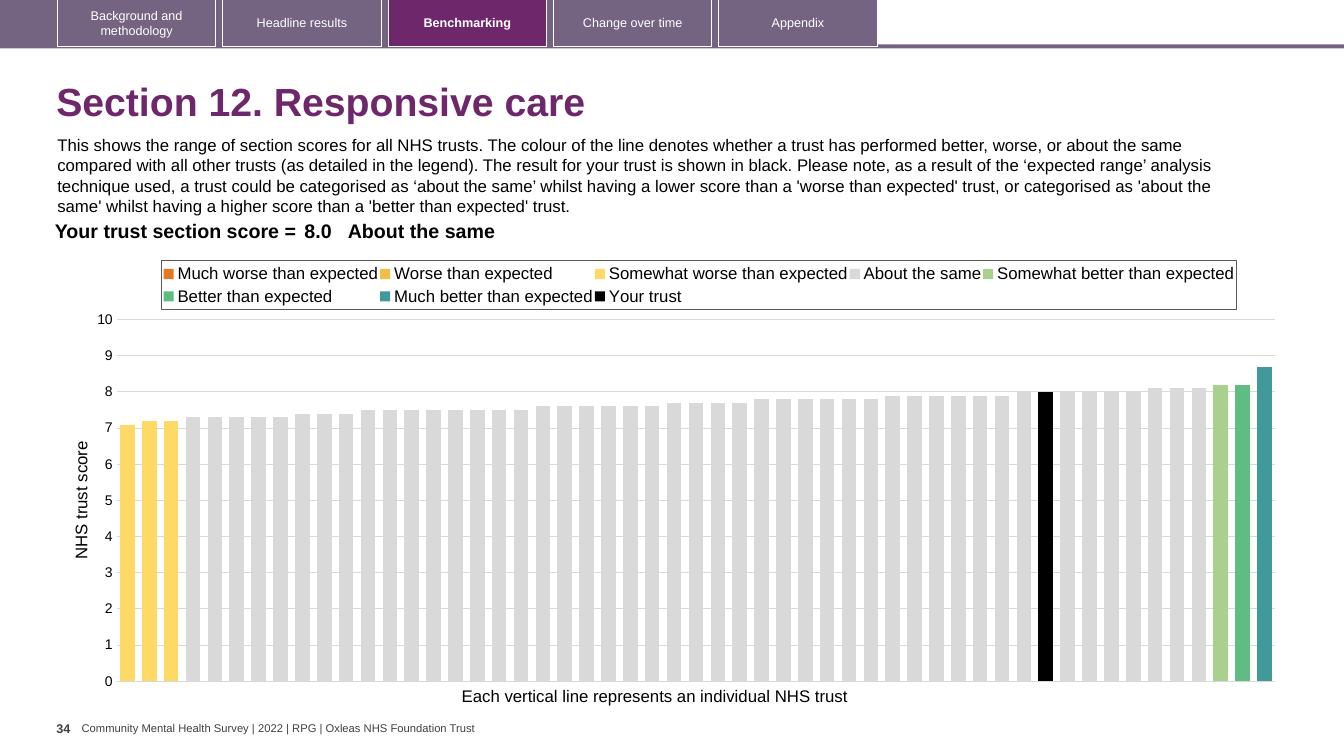
from copy import deepcopy
from itertools import chain, repeat

from lxml import etree
from pptx import Presentation
from pptx.chart.data import CategoryChartData
from pptx.dml.color import RGBColor
from pptx.enum.chart import XL_CHART_TYPE as ChartType, XL_LEGEND_POSITION as LegendPosition
from pptx.enum.chart import XL_TICK_MARK as TickMark
from pptx.enum.shapes import MSO_SHAPE as Shape
from pptx.enum.text import MSO_ANCHOR as Anchor, PP_ALIGN as Align
from pptx.oxml import parse_xml
from pptx.oxml.ns import nsdecls, qn
from pptx.util import Inches, Pt

COLORS = {
    "bar": "756382", "active": "6D276A", "white": "FFFFFF", "black": "000000",
    "footer": "404040", "grid": "D9D9D9", "border": "595959",
}


def write_text(frame, text, size, color, bold=False, align=Align.LEFT,
               anchor=Anchor.TOP, margins=(0.1, 0.05), wrap=True):
    frame.word_wrap = wrap
    frame.vertical_anchor = anchor
    frame.margin_left = frame.margin_right = Inches(margins[0])
    frame.margin_top = frame.margin_bottom = Inches(margins[1])
    paragraph = frame.paragraphs[0]
    paragraph.text = text
    paragraph.alignment = align
    font = paragraph.font
    font.name, font.size, font.bold = "Arial", Pt(size), bold
    font.color.rgb = RGBColor.from_string(COLORS[color])
    return paragraph


def manual_layout(x, y, width, height, inner=False):
    """Return a chart layout element; the numbers are fractions of the chart."""
    target = '<c:layoutTarget val="inner"/>' if inner else ""
    return parse_xml(
        f'<c:layout {nsdecls("c")}><c:manualLayout>{target}'
        '<c:xMode val="edge"/><c:yMode val="edge"/>'
        f'<c:x val="{x}"/><c:y val="{y}"/><c:w val="{width}"/><c:h val="{height}"/>'
        '</c:manualLayout></c:layout>')


presentation = Presentation()
presentation.slide_width, presentation.slide_height = Inches(13.33), Inches(7.5)
slide = presentation.slides.add_slide(presentation.slide_layouts[6])
shapes = slide.shapes

# Navigation bar
for top, width, height in [(0.44, 13.36, 0.04), (0, 8.73, 0.47)]:
    band = shapes.add_shape(Shape.RECTANGLE, Inches(-0.03), Inches(top),
                            Inches(width), Inches(height))
    band.shadow.inherit = False
    band.fill.solid()
    band.fill.fore_color.rgb = RGBColor.from_string(COLORS["bar"])
    band.line.fill.background()

tabs = ["Background and methodology", "Headline results", "Benchmarking",
        "Change over time", "Appendix"]
for index, label in enumerate(tabs):
    active = label == "Benchmarking"
    tab = shapes.add_shape(Shape.RECTANGLE, Inches(0.57 + 1.64 * index), Inches(-0.01),
                           Inches(1.57), Inches(0.47))
    tab.shadow.inherit = False
    if active:
        tab.fill.solid()
        tab.fill.fore_color.rgb = RGBColor.from_string(COLORS["active"])
    else:
        tab.fill.background()
    tab.line.color.rgb = RGBColor.from_string(COLORS["white"])
    tab.line.width = Pt(0.75)
    write_text(tab.text_frame, label, 9, "white", active, Align.CENTER, Anchor.MIDDLE)

# Title, introduction and footer
title = shapes.add_textbox(Inches(0.46), Inches(0.67), Inches(12.49), Inches(0.72))
write_text(title.text_frame, "Section 12. Responsive care", 28, "active", True,
           anchor=Anchor.MIDDLE).line_spacing = 0.9

introduction = shapes.add_textbox(Inches(0.47), Inches(1.29), Inches(12.13), Inches(0.91))
write_text(
    introduction.text_frame,
    "This shows the range of section scores for all NHS trusts. The colour of the line "
    "denotes whether a trust has performed better, worse, or about the same compared with "
    "all other trusts (as detailed in the legend). The result for your trust is shown in "
    "black. Please note, as a result of the ‘expected range’ analysis technique used, a "
    "trust could be categorised as ‘about the same’ whilst having a lower score than a "
    "'worse than expected' trust, or categorised as 'about the same' whilst having a higher "
    "score than a 'better than expected' trust.", 12, "black")

page_number = shapes.add_textbox(Inches(0.56), Inches(7.1), Inches(0.25), Inches(0.4))
write_text(page_number.text_frame, "34", 9, "footer", True, margins=(0, 0.05), wrap=False)

footer = shapes.add_textbox(Inches(0.81), Inches(7.16), Inches(3.96), Inches(0.13))
write_text(footer.text_frame,
           "Community Mental Health Survey | 2022 | RPG | Oxleas NHS Foundation Trust",
           8, "footer", anchor=Anchor.MIDDLE, margins=(0, 0), wrap=False)

# Chart: each series is its colour, first trust (from 0) and runs of (score, count)
TRUSTS = 53
series_runs = {
    "Much worse than expected": ("E87722", 0, []),
    "Worse than expected": ("F1BE48", 0, []),
    "Somewhat worse than expected": ("FFD966", 0, [(7.1, 1), (7.2, 2)]),
    "About the same": ("D9D9D9", 3, [(7.3, 5), (7.4, 3), (7.5, 8), (7.6, 6), (7.7, 4),
                                     (7.8, 6), (7.9, 6), (8, 6), (8.1, 3)]),
    "Somewhat better than expected": ("A9D18E", 50, [(8.2, 1)]),
    "Better than expected": ("5FBD83", 51, [(8.2, 1)]),
    "Much better than expected": ("419999", 52, [(8.7, 1)]),
    "Your trust": ("000000", 42, [(8, 1)]),
}
chart_data = CategoryChartData()
chart_data.categories = [str(number) for number in range(1, TRUSTS + 1)]
for name, (color, start, runs) in series_runs.items():
    scores = list(chain.from_iterable(repeat(score, count) for score, count in runs))
    after = TRUSTS - start - len(scores)
    chart_data.add_series(name, [None] * start + scores + [None] * after)

chart = shapes.add_chart(ChartType.COLUMN_CLUSTERED, Inches(0.67), Inches(2.47),
                         Inches(12.15), Inches(4.44), chart_data).chart
chart.has_title = False
chart.font.name, chart.font.size = "Calibri", Pt(10)
chart.font.color.rgb = RGBColor.from_string(COLORS["black"])
plot = chart.plots[0]
plot.gap_width, plot.overlap, plot.vary_by_categories = 50, 100, False
for series, (color, start, runs) in zip(plot.series, series_runs.values()):
    series.format.fill.solid()
    series.format.fill.fore_color.rgb = RGBColor.from_string(color)

chart.category_axis.visible = False
score_axis = chart.value_axis
score_axis.minimum_scale, score_axis.maximum_scale, score_axis.major_unit = 0, 10, 1
score_axis.major_tick_mark = TickMark.NONE
score_axis.format.line.fill.background()
score_axis.major_gridlines.format.line.color.rgb = RGBColor.from_string(COLORS["grid"])
score_axis.major_gridlines.format.line.width = Pt(0.75)
score_axis.tick_labels.font.name, score_axis.tick_labels.font.size = "Arial", Pt(10)
score_title = score_axis.axis_title.text_frame.paragraphs[0]
score_title.text = "NHS trust score"
score_title.font.name, score_title.font.size, score_title.font.bold = "Arial", Pt(12), False
score_title.font.color.rgb = RGBColor.from_string(COLORS["black"])

chart.has_legend = True
legend = chart.legend
legend.position, legend.include_in_layout = LegendPosition.TOP, False
legend.font.name, legend.font.size = "Arial", Pt(12)
legend.font.color.rgb = RGBColor.from_string(COLORS["black"])

# Layouts and the legend border
plot_area = chart.element.find(".//" + qn("c:plotArea"))
legend_element = chart.element.find(".//" + qn("c:legend"))
for parent in (plot_area, legend_element):
    for layout in parent.findall(qn("c:layout")):
        parent.remove(layout)
plot_area.insert(0, manual_layout(0.04, 0.158, 0.946, 0.808, inner=True))
legend_element.find(qn("c:legendPos")).addnext(manual_layout(0.077, 0.026, 0.877, 0.11))
legend_element.find(qn("c:overlay")).addnext(parse_xml(
    f'<c:spPr {nsdecls("c", "a")}><a:ln w="9525"><a:solidFill>'
    f'<a:srgbClr val="{COLORS["border"]}"/></a:solidFill></a:ln></c:spPr>'))

# "Your trust" goes on a second, unlabelled axis, in front of the other columns
columns = plot_area.find(qn("c:barChart"))
front_columns = deepcopy(columns)
columns.remove(columns.findall(qn("c:ser"))[-1])
for series_element in front_columns.findall(qn("c:ser"))[:-1]:
    front_columns.remove(series_element)
columns.addnext(front_columns)
category_element, value_element = plot_area.find(qn("c:catAx")), plot_area.find(qn("c:valAx"))
front_category, front_value = deepcopy(category_element), deepcopy(value_element)
for tag in ("c:majorGridlines", "c:title"):
    front_value.remove(front_value.find(qn(tag)))
for axis, axis_id, cross_id in [(front_category, "5001", "5002"),
                                (front_value, "5002", "5001")]:
    axis.find(qn("c:axId")).set("val", axis_id)
    axis.find(qn("c:crossAx")).set("val", cross_id)
for reference, axis_id in zip(front_columns.findall(qn("c:axId")), ("5001", "5002")):
    reference.set("val", axis_id)
for tag, value in [("c:axPos", "r"), ("c:majorTickMark", "out"),
                   ("c:tickLblPos", "none"), ("c:crosses", "max")]:
    front_value.find(qn(tag)).set("val", value)
value_element.addnext(front_value)
front_value.addnext(front_category)

caption = shapes.add_textbox(Inches(4.48), Inches(6.75), Inches(4.11), Inches(0.3))
write_text(caption.text_frame, "Each vertical line represents an individual NHS trust",
           12, "black", wrap=False)

# Section score
score_table = shapes.add_table(1, 3, Inches(0.35), Inches(2.15),
                               Inches(11.69), Inches(0.31)).table
score_table.first_row = score_table.horz_banding = False
score_cells = [("Your trust section score =", 2.63, Align.RIGHT, 0.04),
               ("8.0", 0.47, Align.LEFT, 0.04), ("About the same", 8.59, Align.LEFT, 0)]
for index, (text, width, align, margin) in enumerate(score_cells):
    score_table.columns[index].width = Inches(width)
    cell = score_table.cell(0, index)
    cell.fill.background()
    write_text(cell.text_frame, text, 14, "black", True, align)
    cell.margin_left = cell.margin_right = Inches(margin)
    cell.margin_top = cell.margin_bottom = Inches(0.04)
    for side in ("a:lnB", "a:lnT", "a:lnR", "a:lnL"):
        border = etree.Element(qn(side), w="0")
        etree.SubElement(border, qn("a:noFill"))
        cell.fill._xPr.insert(0, border)

presentation.save("out.pptx")
